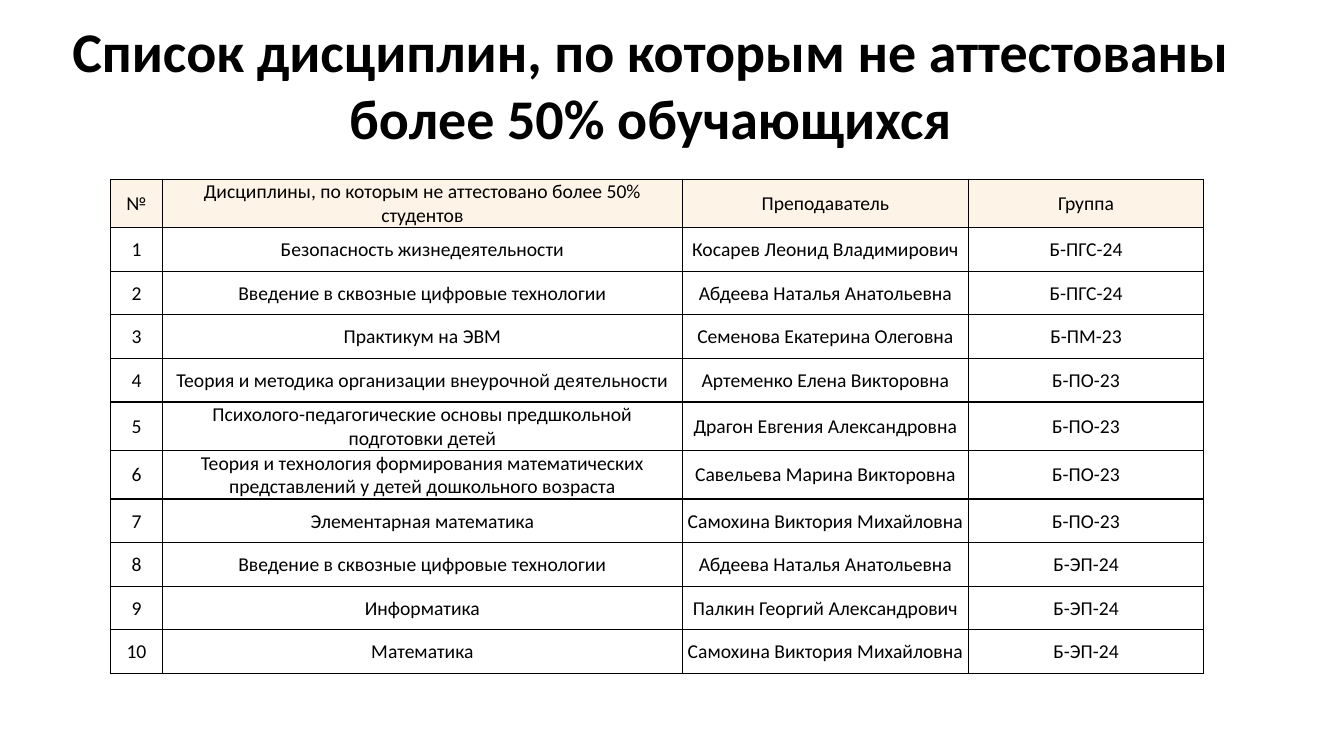
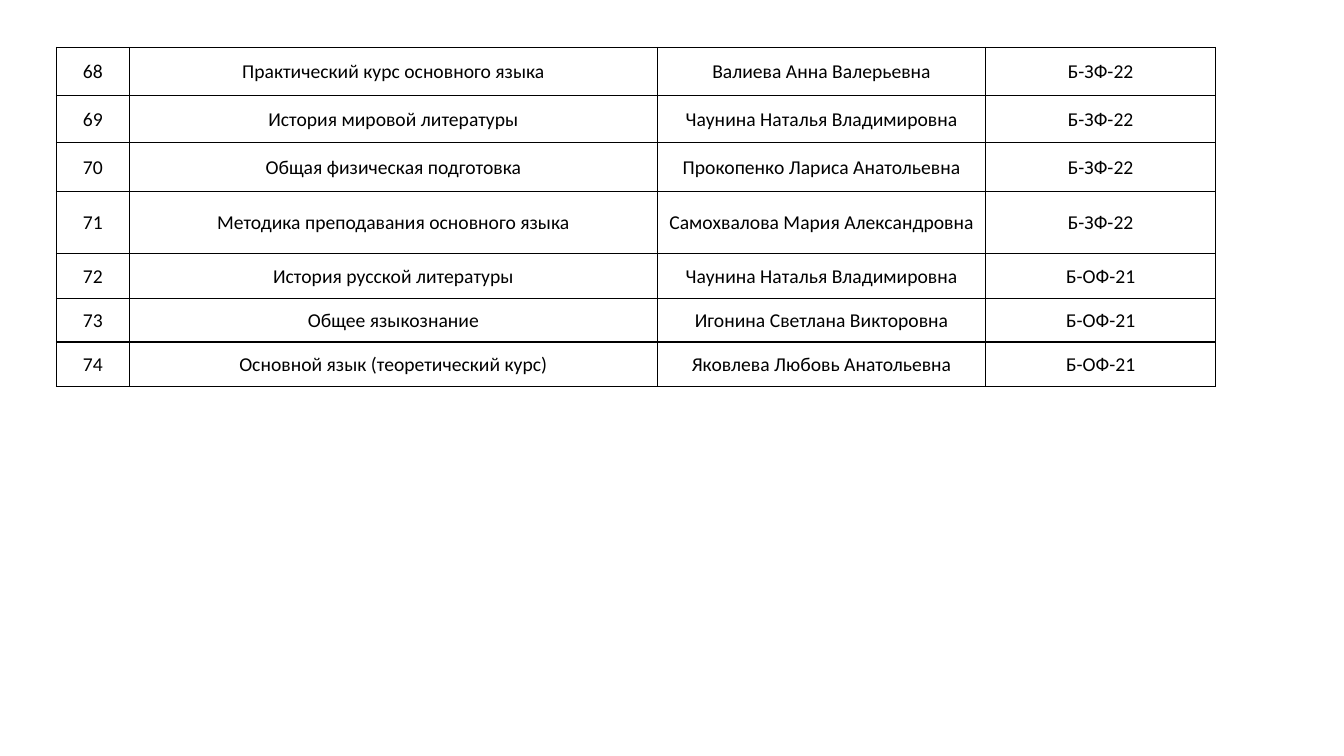
import pptx
import pptx.dml.color
import pptx.enum.text
import pptx.oxml
import pptx.oxml.ns
import pptx.util

Pt = pptx.util.Pt
MIDDLE = pptx.enum.text.MSO_ANCHOR.MIDDLE
CENTER = pptx.enum.text.PP_ALIGN.CENTER

# Shared style
FONT = "Calibri"
COLORS = {"text": "000000", "border": "000000", "header": "FEF3E7", "white": "FFFFFF"}

# Table content
HEADER = ("№", "Дисциплины, по которым не аттестовано более 50% студентов",
          "Преподаватель", "Группа")
FIRST_ROWS = [
    ("1", "Безопасность жизнедеятельности", "Косарев Леонид Владимирович", "Б-ПГС-24"),
    ("2", "Введение в сквозные цифровые технологии", "Абдеева Наталья Анатольевна", "Б-ПГС-24"),
    ("3", "Практикум на ЭВМ", "Семенова Екатерина Олеговна", "Б-ПМ-23"),
    ("4", "Теория и методика организации внеурочной деятельности",
     "Артеменко Елена Викторовна", "Б-ПО-23"),
    ("5", "Психолого-педагогические основы предшкольной подготовки детей",
     "Драгон Евгения Александровна", "Б-ПО-23"),
    ("6", "Теория и технология формирования математических представлений "
     "у детей дошкольного возраста", "Савельева Марина Викторовна", "Б-ПО-23"),
    ("7", "Элементарная математика", "Самохина Виктория Михайловна", "Б-ПО-23"),
    ("8", "Введение в сквозные цифровые технологии", "Абдеева Наталья Анатольевна", "Б-ЭП-24"),
    ("9", "Информатика", "Палкин Георгий Александрович", "Б-ЭП-24"),
    ("10", "Математика", "Самохина Виктория Михайловна", "Б-ЭП-24"),
]
LAST_ROWS = [
    ("68", "Практический курс основного языка", "Валиева Анна Валерьевна", "Б-ЗФ-22"),
    ("69", "История мировой литературы", "Чаунина Наталья Владимировна", "Б-ЗФ-22"),
    ("70", "Общая физическая подготовка", "Прокопенко Лариса Анатольевна", "Б-ЗФ-22"),
    ("71", "Методика преподавания основного языка", "Самохвалова Мария Александровна", "Б-ЗФ-22"),
    ("72", "История русской литературы", "Чаунина Наталья Владимировна", "Б-ОФ-21"),
    ("73", "Общее языкознание", "Игонина Светлана Викторовна", "Б-ОФ-21"),
    ("74", "Основной язык (теоретический курс)", "Яковлева Любовь Анатольевна", "Б-ОФ-21"),
]


def rgb(name):
    return pptx.dml.color.RGBColor.from_string(COLORS[name])


def format_paragraph(p, size, bold=False):
    p.alignment = CENTER
    p.font.name = FONT
    p.font.size = Pt(size)
    p.font.bold = bold
    p.font.color.rgb = rgb("text")


def set_title(slide, text, left, top, width, height):
    sp = slide.shapes.title
    sp.left, sp.top, sp.width, sp.height = Pt(left), Pt(top), Pt(width), Pt(height)
    tf = sp.text_frame
    tf.text = text
    tf.word_wrap = True
    tf.auto_size = pptx.enum.text.MSO_AUTO_SIZE.NONE
    tf.vertical_anchor = MIDDLE
    format_paragraph(tf.paragraphs[0], 40, bold=True)


def set_borders(cell):
    # Border lines come before the fill in the cell properties
    tc_pr = cell._tc.get_or_add_tcPr()
    for i, side in enumerate(("lnL", "lnR", "lnT", "lnB")):
        tc_pr.insert(i, pptx.oxml.parse_xml(
            f'<a:{side} {pptx.oxml.ns.nsdecls("a")} w="{Pt(1)}"><a:solidFill>'
            f'<a:srgbClr val="{COLORS["border"]}"/></a:solidFill></a:{side}>'))


def fill_cell(cell, text, fill):
    cell.text = text
    cell.vertical_anchor = MIDDLE
    cell.margin_left = cell.margin_right = cell.margin_top = Pt(0.6)
    cell.margin_bottom = 0
    format_paragraph(cell.text_frame.paragraphs[0], 14)
    cell.fill.solid()
    cell.fill.fore_color.rgb = rgb(fill)
    set_borders(cell)


def add_table(slide, rows, left, top, widths, heights, has_header=False):
    table = slide.shapes.add_table(len(rows), len(widths), Pt(left), Pt(top),
                                   Pt(sum(widths)), Pt(sum(heights))).table
    table.first_row = has_header
    table.horz_banding = False
    for column, width in zip(table.columns, widths):
        column.width = Pt(width)
    for r, (row, height) in enumerate(zip(rows, heights)):
        table.rows[r].height = Pt(height)
        fill = "header" if has_header and r == 0 else "white"
        for c, text in enumerate(row):
            fill_cell(table.cell(r, c), text, fill)


def main():
    prs = pptx.Presentation()
    prs.slide_width, prs.slide_height = Pt(960), Pt(540)

    # Start of the list
    slide = prs.slides.add_slide(prs.slide_layouts[5])
    set_title(slide, "Список дисциплин, по которым не аттестованы более 50% обучающихся",
              34.5, 29, 860, 61)
    rows = [HEADER] + FIRST_ROWS
    add_table(slide, rows, 79, 128, (37, 371.5, 204.3, 168), [31.1] * len(rows),
              has_header=True)

    # End of the list
    slide = prs.slides.add_slide(prs.slide_layouts[6])
    add_table(slide, LAST_ROWS, 40.3, 34, (52, 377.5, 234.2, 164.5),
              (34.5, 33.4, 35, 44.5, 32, 31, 32))

    prs.save("out.pptx")


if __name__ == "__main__":
    main()
